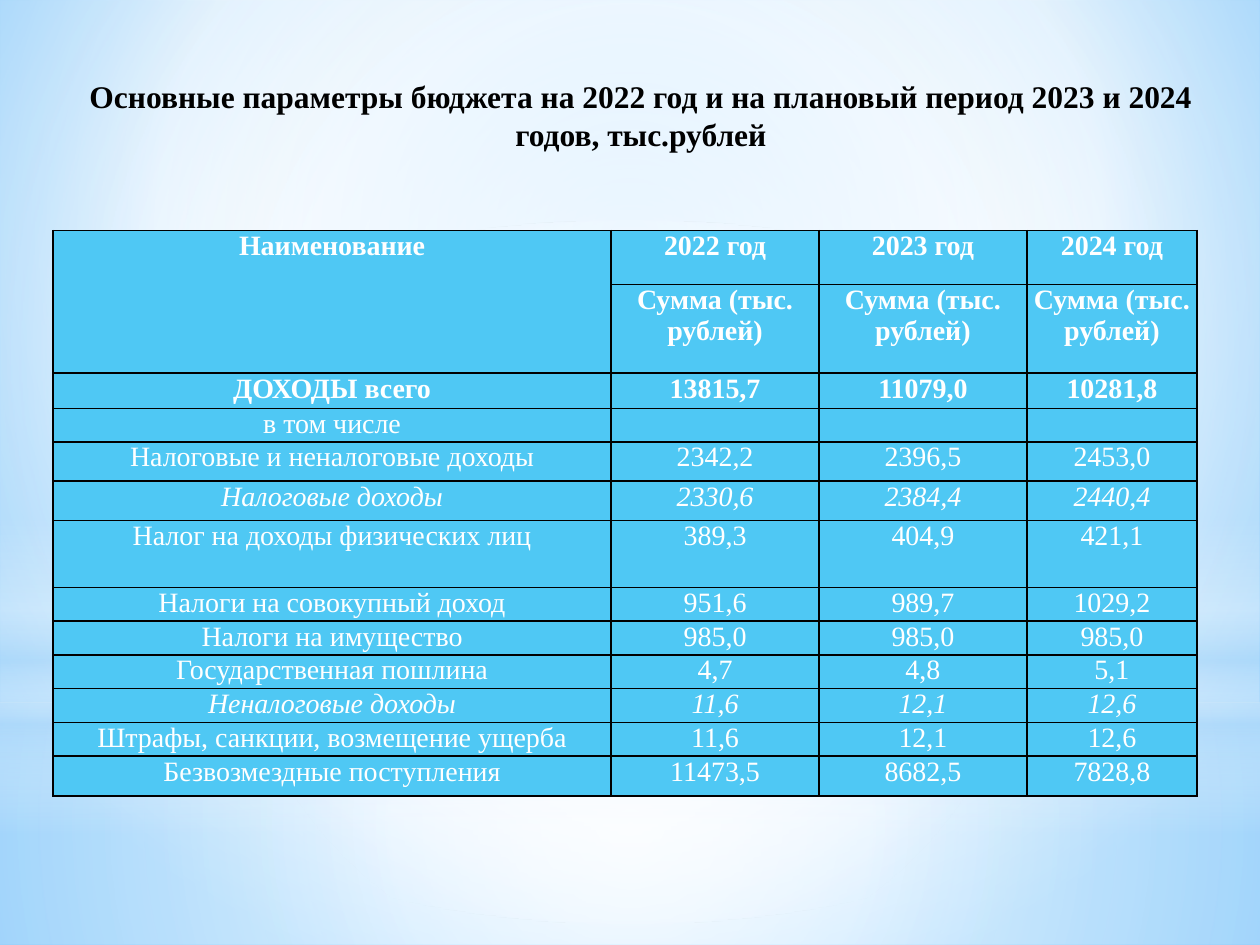
from lxml import etree
from pptx import Presentation, util as u
from pptx.dml.color import RGBColor
from pptx.enum import shapes, text
from pptx.oxml import ns

BLACK = RGBColor(0x00, 0x00, 0x00)
WHITE = RGBColor(0xFF, 0xFF, 0xFF)
SKY = RGBColor(0x9E, 0xD5, 0xFF)
DEEP_SKY = RGBColor(0x5B, 0xB9, 0xFF)
PALE_BLUE = RGBColor(0xB4, 0xDC, 0xFA)
CELL_BLUE = RGBColor(0x4F, 0xC8, 0xF4)
FONT = "Times New Roman"
CENTRE = (50, 50, 50, 50)

TITLE = "Основные параметры бюджета на 2022 год и на плановый период 2023 и 2024 годов, тыс.рублей"
COLUMN_WIDTHS = (11.25, 4.19, 4.19, 3.43)
SUM = "Сумма (тыс. рублей)"
# Height in cm, style, cell texts
ROWS = (
    (1.09, "bold", ("Наименование", "2022 год", "2023 год", "2024 год")),
    (1.78, "bold", ("", "Сумма (тыс.\nрублей)", SUM, SUM)),
    (0.71, "bold", ("ДОХОДЫ всего", "13815,7", "11079,0", "10281,8")),
    (0.68, "plain", ("в том числе", "", "", "")),
    (0.79, "plain", ("Налоговые и неналоговые доходы", "2342,2", "2396,5", "2453,0")),
    (0.79, "italic", ("Налоговые доходы", "2330,6", "2384,4", "2440,4")),
    (1.35, "plain", ("Налог на доходы физических лиц", "389,3", "404,9", "421,1")),
    (0.68, "plain", ("Налоги на совокупный доход", "951,6", "989,7", "1029,2")),
    (0.68, "plain", ("Налоги на имущество", "985,0", "985,0", "985,0")),
    (0.68, "plain", ("Государственная пошлина", "4,7", "4,8", "5,1")),
    (0.68, "italic", ("Неналоговые доходы", "11,6", "12,1", "12,6")),
    (0.68, "plain", ("Штрафы, санкции, возмещение ущерба", "11,6", "12,1", "12,6")),
    (0.81, "plain", ("Безвозмездные поступления", "11473,5", "8682,5", "7828,8")),
)


def add_element(parent, tag, **attributes):
    return etree.SubElement(parent, ns.qn(tag), attributes)


def set_gradient(fill, stops, focus=None):
    """Stops are (position, colour, opacity) in percent; without a focus the gradient runs downwards."""
    fill.gradient()
    gradient = fill._xPr.find(ns.qn("a:gradFill"))
    for child in list(gradient):
        gradient.remove(child)
    stop_list = add_element(gradient, "a:gsLst")
    for position, colour, opacity in stops:
        stop = add_element(stop_list, "a:gs", pos=str(position * 1000))
        tint = add_element(stop, "a:srgbClr", val=str(colour))
        if opacity < 100:
            add_element(tint, "a:alpha", val=str(opacity * 1000))
    if focus:
        circle = add_element(gradient, "a:path", path="circle")
        edges = {side: str(value * 1000) for side, value in zip("ltrb", focus)}
        add_element(circle, "a:fillToRect", **edges)
    else:
        add_element(gradient, "a:lin", ang="5400000", scaled="0")


def add_glow(slide, kind, top, height, stops, focus=CENTRE):
    shape = slide.shapes.add_shape(kind, 0, u.Cm(top), u.Cm(25.4), u.Cm(height))
    shape.shadow.inherit = False
    shape.line.fill.background()
    set_gradient(shape.fill, stops, focus)


def add_backdrop(slide):
    rectangle, oval = shapes.MSO_SHAPE.RECTANGLE, shapes.MSO_SHAPE.OVAL
    set_gradient(slide.background.fill,
                 ((0, SKY, 100), (60, WHITE, 100), (100, DEEP_SKY, 100)), (20, 10, 20, 60))
    add_glow(slide, rectangle, 14.17, 4.88,
             ((0, WHITE, 91), (37, WHITE, 76), (100, PALE_BLUE, 79)))
    add_glow(slide, rectangle, 0, 14.17,
             ((0, WHITE, 89), (48, WHITE, 62), (100, PALE_BLUE, 79)))
    add_glow(slide, rectangle, 10.46, 6.35,
             ((0, WHITE, 0), (29, WHITE, 30), (45, PALE_BLUE, 40),
              (55, WHITE, 26), (65, PALE_BLUE, 60), (100, WHITE, 0)), focus=None)
    add_glow(slide, oval, 4.45, 14.17, ((0, WHITE, 100), (56, WHITE, 0)))


def format_paragraph(paragraph, size, colour, style):
    paragraph.alignment = text.PP_ALIGN.CENTER
    for run in paragraph.runs:
        font = run.font
        font.name, font.size = FONT, u.Pt(size)
        font.bold, font.italic = style == "bold", style == "italic"
        font.color.rgb = colour
    if not paragraph.runs:
        add_element(paragraph._p, "a:endParaRPr", sz=str(size * 100))


def add_title(slide, left, top, width, height):
    box = slide.shapes.add_textbox(u.Cm(left), u.Cm(top), u.Cm(width), u.Cm(height))
    frame = box.text_frame
    frame.word_wrap = True
    frame.vertical_anchor = text.MSO_ANCHOR.MIDDLE
    frame.text = TITLE
    format_paragraph(frame.paragraphs[0], 18, BLACK, "bold")


def format_cell(cell, margin, style):
    cell.margin_left = cell.margin_right = u.Cm(margin)
    cell.margin_top = cell.margin_bottom = 0
    properties = cell._tc.get_or_add_tcPr()
    for side in ("L", "R", "T", "B"):
        border = add_element(properties, f"a:ln{side}", w=str(u.Pt(1)))
        add_element(add_element(border, "a:solidFill"), "a:srgbClr", val=str(BLACK))
    cell.fill.solid()
    cell.fill.fore_color.rgb = CELL_BLUE
    for paragraph in cell.text_frame.paragraphs:
        format_paragraph(paragraph, 16, WHITE, style)


def add_budget_table(slide, left, top):
    width, height = sum(COLUMN_WIDTHS), sum(row[0] for row in ROWS)
    table = slide.shapes.add_table(len(ROWS), len(COLUMN_WIDTHS), u.Cm(left), u.Cm(top),
                                   u.Cm(width), u.Cm(height)).table
    table.first_row = table.horz_banding = False
    for column, column_width in zip(table.columns, COLUMN_WIDTHS):
        column.width = u.Cm(column_width)
    for row_index, (row_height, style, values) in enumerate(ROWS):
        table.rows[row_index].height = u.Cm(row_height)
        margin = 0.12 if row_index < 4 else 0.18
        for column_index, value in enumerate(values):
            cell = table.cell(row_index, column_index)
            cell.text_frame.text = value
            format_cell(cell, margin, style)
    table.cell(0, 0).merge(table.cell(1, 0))


def main():
    presentation = Presentation()
    presentation.slide_width, presentation.slide_height = u.Cm(25.4), u.Cm(19.05)
    slide = presentation.slides.add_slide(presentation.slide_layouts[6])
    add_backdrop(slide)
    add_title(slide, 1.07, 1.42, 23.7, 1.8)
    add_budget_table(slide, 1.07, 4.65)
    presentation.save("out.pptx")


if __name__ == "__main__":
    main()
